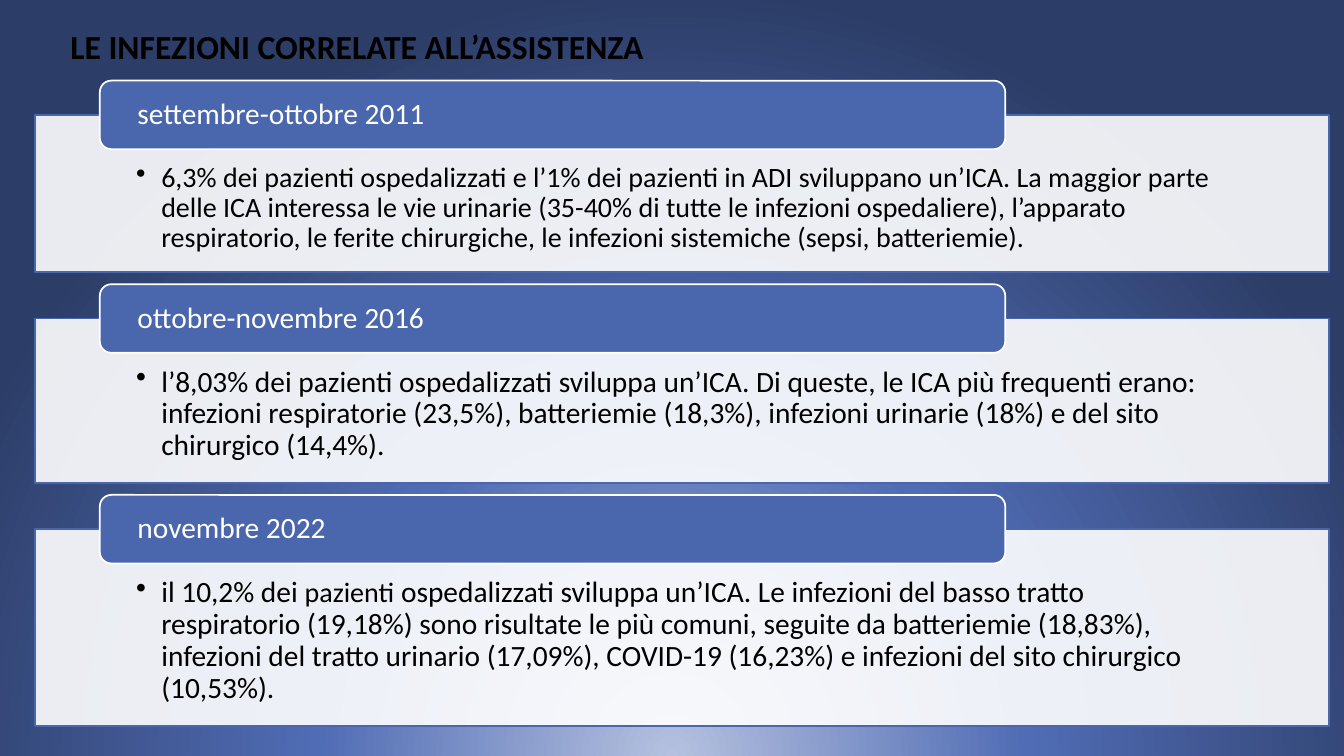
from lxml.etree import SubElement
from pptx import Presentation
from pptx.dml.color import RGBColor
from pptx.enum.shapes import MSO_SHAPE as Shape
from pptx.enum.text import MSO_ANCHOR as Anchor, MSO_AUTO_SIZE as AutoSize, PP_ALIGN as Align
from pptx.oxml import parse_xml
from pptx.oxml.ns import nsdecls, qn
from pptx.util import Inches, Pt

BLACK = RGBColor(0x00, 0x00, 0x00)
WHITE = RGBColor(0xFF, 0xFF, 0xFF)
BLUE = RGBColor(0x4A, 0x66, 0xAC)
GLOW = [(0, RGBColor(0xB5, 0xC1, 0xDF)), (46, RGBColor(0x50, 0x6C, 0xB4)),
        (100, RGBColor(0x2C, 0x3D, 0x67))]

PANEL_LEFT, PANEL_WIDTH, FIRST_TOP, PANEL_GAP = 0.35, 12.83, 1.14, 0.46
TAB_LEFT, TAB_WIDTH, TAB_HEIGHT, TAB_RISE = 0.99, 8.98, 0.68, 0.34

# Heading, panel height, text spans with their sizes
SURVEYS = [
    ("settembre-ottobre 2011", 1.56, [
        ("6,3% dei pazienti ospedalizzati e l’1% dei pazienti in ADI sviluppano un’ICA. "
         "La maggior parte delle ICA interessa le vie urinarie (35-40% di tutte le infezioni "
         "ospedaliere), l’apparato respiratorio, le ferite chirurgiche, le infezioni "
         "sistemiche (sepsi, batteriemie).", 20)]),
    ("ottobre-novembre 2016", 1.63, [
        ("l’8,03% dei pazienti ospedalizzati sviluppa un’ICA. Di queste, le ICA più frequenti "
         "erano: infezioni respiratorie (23,5%), batteriemie (18,3%), infezioni urinarie (18%) "
         "e del sito chirurgico (14,4%).", 21)]),
    ("novembre 2022", 1.95, [
        ("il 10,2% dei ", 21),
        ("pazienti", 20),
        (" ospedalizzati sviluppa un’ICA. Le infezioni del basso tratto respiratorio (19,18%) "
         "sono risultate le più comuni, seguite da batteriemie (18,83%), infezioni del tratto "
         "urinario (17,09%), COVID-19 (16,23%) e infezioni del sito chirurgico (10,53%).", 21)]),
]


class SurveySlide:
    font = "Calibri"
    line_width = Pt(1.25)

    def __init__(self, page):
        self.page = page

    def background(self, stops):
        """Fill the page with a round gradient centred below its bottom edge."""
        self.page.background.fill.gradient()
        gradient = self.page.element.find(".//" + qn("a:gradFill"))
        marks = "".join(f'<a:gs pos="{place * 1000}"><a:srgbClr val="{color}"/></a:gs>'
                        for place, color in stops)
        gradient.getparent().replace(gradient, parse_xml(
            f'<a:gradFill {nsdecls("a")} rotWithShape="1"><a:gsLst>{marks}</a:gsLst>'
            '<a:path path="circle"><a:fillToRect l="50000" t="130000" r="50000" b="-30000"/>'
            '</a:path></a:gradFill>'))

    def add_spans(self, para, spans, color, bold=False):
        para.alignment = Align.LEFT
        for text, size in spans:
            span = para.add_run()
            span.text = text
            span.font.name, span.font.size = self.font, Pt(size)
            span.font.color.rgb, span.font.bold = color, bold

    def title(self, text, left, top, width, height):
        box = self.page.shapes.add_textbox(
            Inches(left), Inches(top), Inches(width), Inches(height))
        box.text_frame.word_wrap = True
        box.text_frame.auto_size = AutoSize.SHAPE_TO_FIT_TEXT
        self.add_spans(box.text_frame.paragraphs[0], [(text, 24)], BLACK, bold=True)

    def block(self, kind, place, fill, line, insets, anchor):
        """Draw a filled shape with its text frame laid out, and return it."""
        shape = self.page.shapes.add_shape(kind, *map(Inches, place))
        shape.shadow.inherit = False
        shape.fill.solid()
        shape.fill.fore_color.rgb = fill
        shape.line.color.rgb = line
        shape.line.width = self.line_width
        frame = shape.text_frame
        frame.word_wrap = True
        frame.vertical_anchor = anchor
        (frame.margin_left, frame.margin_top,
         frame.margin_right, frame.margin_bottom) = map(Inches, insets)
        frame.paragraphs[0].line_spacing = 0.9
        return shape

    def panel(self, spans, top, height):
        shape = self.block(Shape.RECTANGLE, (PANEL_LEFT, top, PANEL_WIDTH, height),
                           WHITE, BLUE, (1, 0.48, 1, 0.16), Anchor.TOP)
        color = shape.element.spPr.find(f"{qn('a:solidFill')}/{qn('a:srgbClr')}")
        SubElement(color, qn("a:alpha")).set("val", "90000")
        para = shape.text_frame.paragraphs[0]
        para.level = 1
        self.add_spans(para, spans, BLACK)
        properties = para._p.get_or_add_pPr()
        properties.set("marL", str(Inches(0.25)))
        properties.set("indent", str(Inches(-0.25)))
        SubElement(properties, qn("a:buChar")).set("char", "•")

    def tab(self, heading, top):
        shape = self.block(Shape.ROUNDED_RECTANGLE, (TAB_LEFT, top, TAB_WIDTH, TAB_HEIGHT),
                           BLUE, WHITE, (0.34, 0, 0.34, 0), Anchor.MIDDLE)
        self.add_spans(shape.text_frame.paragraphs[0], [(heading, 21)], WHITE)


def main():
    deck = Presentation()
    deck.slide_width, deck.slide_height = Inches(13.33), Inches(7.5)
    slide = SurveySlide(deck.slides.add_slide(deck.slide_layouts[6]))
    slide.background(GLOW)
    slide.title("LE INFEZIONI CORRELATE ALL’ASSISTENZA", 0.6, 0.21, 6.67, 0.5)
    top = FIRST_TOP
    for heading, height, spans in SURVEYS:
        slide.panel(spans, top, height)
        slide.tab(heading, top - TAB_RISE)
        top += height + PANEL_GAP
    deck.save("out.pptx")


if __name__ == "__main__":
    main()
